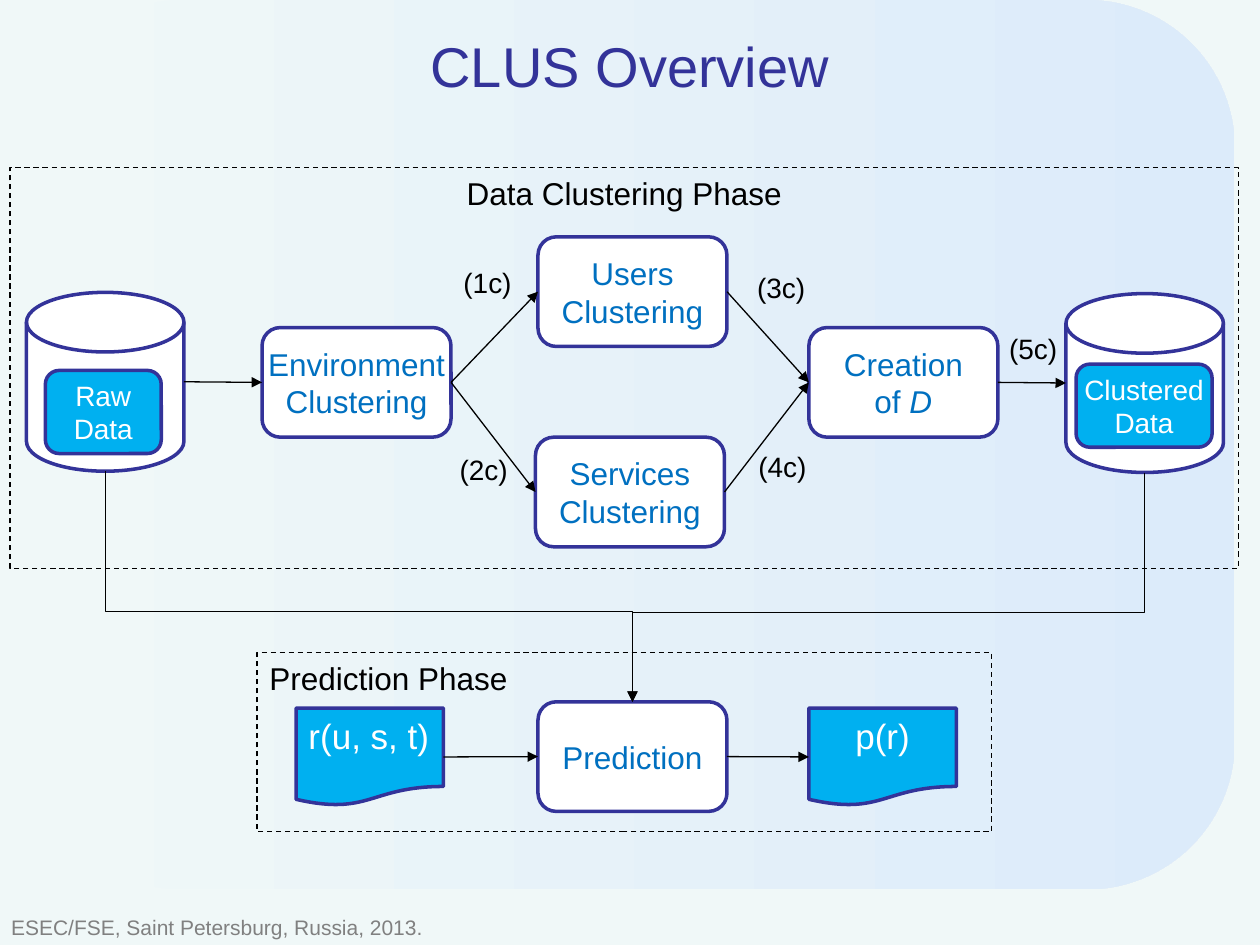
from collections import namedtuple
from pptx import Presentation
from pptx.dml.color import RGBColor
from pptx.enum.dml import MSO_LINE as Dash
from pptx.enum.shapes import MSO_CONNECTOR as Link, MSO_SHAPE as Form
from pptx.enum.text import MSO_ANCHOR as Anchor, PP_ALIGN as Align
from pptx.oxml.ns import qn
from pptx.util import Inches, Pt
from lxml import etree

PALE = RGBColor(0xF0, 0xF8, 0xF8)
SKY = RGBColor(0xDC, 0xEB, 0xFA)
NAVY = RGBColor(0x33, 0x33, 0x99)
CYAN = RGBColor(0x00, 0xB0, 0xF0)
BLUE = RGBColor(0x00, 0x70, 0xC0)
GRAY = RGBColor(0x80, 0x80, 0x80)
BLACK = RGBColor(0, 0, 0)
WHITE = RGBColor(0xFF, 0xFF, 0xFF)

# The slide is a grid of 100 columns by 75 rows of square cells
WIDE, HIGH = Inches(10), Inches(7.5)
CELL = WIDE / 100
STEP = (15, 8.7)
DRUM = (12.5, 14.2)
PAGE = (11.7, 7.75)
TAG = (5.9, 3.7)


class Box(namedtuple("Box", "x y w h")):
    """An area in grid cells."""

    def at(self, x, y, size):
        return Box(self.x + x, self.y + y, *size)

    def emu(self):
        return [round(n * CELL) for n in self]

    def west(self):
        return self.x, self.y + self.h / 2

    def east(self):
        return self.x + self.w, self.y + self.h / 2

    def north(self):
        return self.x + self.w / 2, self.y

    def south(self):
        return self.x + self.w / 2, self.y + self.h


def write(shape, text, size=18, color=BLACK, align=Align.LEFT,
          anchor=Anchor.TOP, inset=(0.1, 0.05), wrap=True):
    """Fill a shape with lines of text; stars enclose italic words."""
    frame = shape.text_frame
    frame.word_wrap = wrap
    frame.vertical_anchor = anchor
    frame.margin_left = frame.margin_right = Inches(inset[0])
    frame.margin_top = frame.margin_bottom = Inches(inset[1])
    for i, line in enumerate(text.split("\n")):
        par = frame.add_paragraph() if i else frame.paragraphs[0]
        par.alignment = align
        for j, part in enumerate(line.split("*")):
            if part:
                run = par.add_run()
                run.text = part
                font = run.font
                font.name, font.size = "Arial", Pt(size)
                font.color.rgb = color
                if j % 2:
                    font.italic = True


def label(slide, box, text, **style):
    write(slide.shapes.add_textbox(*box.emu()), text, **style)


def draw(slide, form, box, fill=None, line=NAVY, width=2):
    shape = slide.shapes.add_shape(form, *box.emu())
    shape.shadow.inherit = False
    if fill is None:
        shape.fill.background()
    else:
        shape.fill.solid()
        shape.fill.fore_color.rgb = fill
    if line is None:
        shape.line.fill.background()
    else:
        shape.line.color.rgb = line
        shape.line.width = Pt(width)
    return shape


def node(slide, box, text, fill=WHITE, color=BLUE, size=18):
    shape = draw(slide, Form.ROUNDED_RECTANGLE, box, fill)
    write(shape, text, size=size, color=color, align=Align.CENTER,
          anchor=Anchor.MIDDLE, inset=(0, 0))
    return box


def drum(slide, box, inner, text):
    draw(slide, Form.FLOWCHART_MAGNETIC_DISK, box, WHITE)
    node(slide, inner, text, CYAN, WHITE, 16)
    return box


def page(slide, box, text, align):
    shape = draw(slide, Form.FLOWCHART_DOCUMENT, box, CYAN)
    write(shape, text, size=20, color=WHITE, align=align)
    return box


def phase(slide, box, text, align):
    shape = draw(slide, Form.RECTANGLE, box, None, BLACK, 0.75)
    shape.line.dash_style = Dash.DASH
    write(shape, text, align=align)


def arrow(slide, start, end, kind=Link.STRAIGHT):
    ends = [round(n * CELL) for n in (*start, *end)]
    link = slide.shapes.add_connector(kind, *ends)
    link.line.color.rgb = BLACK
    link.line.width = Pt(0.75)
    tip = etree.SubElement(link.line._get_or_add_ln(), qn("a:tailEnd"))
    tip.set("type", "triangle")
    etree.SubElement(link._element.spPr, qn("a:effectLst"))
    return link


def elbow(slide, start, end, bend):
    """An arrow that runs down, across and down again."""
    (x1, y1), (x2, y2) = start, end
    run, drop = abs(x2 - x1), y2 - y1
    left, top = (x1 + x2 - drop) / 2, (y1 + y2 - run) / 2
    link = arrow(slide, (left, top), (left + drop, top + run), Link.ELBOW)
    # A quarter turn makes the first leg vertical
    turn = link._element.spPr.find(qn("a:xfrm"))
    turn.set("rot", str((90 if x2 < x1 else 270) * 60000))
    if x2 > x1:
        turn.set("flipH", "1")
    geom = link._element.spPr.find(qn("a:prstGeom"))
    guide = etree.SubElement(geom.find(qn("a:avLst")), qn("a:gd"))
    guide.set("name", "adj1")
    guide.set("fmla", f"val {round(bend * 100000)}")


def backdrop(slide, box):
    slide.background.fill.solid()
    slide.background.fill.fore_color.rgb = PALE
    panel = draw(slide, Form.ROUNDED_RECTANGLE,
                 box.at(2.7, 0, (95.3, 70.6)), line=None)
    panel.fill.gradient()
    panel.fill.gradient_angle = 0
    for stop, place, color in zip(panel.fill.gradient_stops, (0, 1), (PALE, SKY)):
        stop.position, stop.color.rgb = place, color
    label(slide, box.at(7.8, 0, (84.4, 10.3)), "CLUS Overview", size=32,
          color=NAVY, align=Align.CENTER, anchor=Anchor.MIDDLE)
    label(slide, box.at(-0.1, 72.1, (40.1, 2.9)),
          "ESEC/FSE, Saint Petersburg, Russia, 2013.", size=12, color=GRAY)


def cluster(slide, box):
    phase(slide, box, "Data Clustering Phase", Align.CENTER)
    raw = drum(slide, box.at(1.3, 9.9, DRUM),
               box.at(2.8, 16.1, (9.2, 6.6)), "Raw\nData")
    done = drum(slide, box.at(83.8, 10, DRUM),
                box.at(84.6, 15.6, (10.8, 6.6)), "Clustered\nData")
    env = node(slide, box.at(20, 12.7, STEP), "Environment Clustering")
    users = node(slide, box.at(41.9, 5.5, STEP), "Users\nClustering")
    serv = node(slide, box.at(41.7, 21.4, STEP), "Services\nClustering")
    make = node(slide, box.at(63.4, 12.7, STEP), "Creation\nof *D*")
    for start, end in ((raw, env), (env, users), (env, serv),
                       (users, make), (serv, make), (make, done)):
        arrow(slide, start.east(), end.west())
    spots = ((35, 7.3), (34.7, 22.1), (58.3, 7.7), (58.4, 21.9), (78.3, 12.5))
    for i, (x, y) in enumerate(spots, 1):
        label(slide, box.at(x, y, TAG), f"({i}c)", size=16, wrap=False)
    return raw, done


def predict(slide, box):
    phase(slide, box, "Prediction Phase", Align.LEFT)
    ask = page(slide, box.at(3.1, 4.4, PAGE), "r(u, s, t)", Align.LEFT)
    core = node(slide, box.at(22.3, 3.9, STEP), "Prediction")
    reply = page(slide, box.at(43.8, 4.4, PAGE), "p(r)", Align.CENTER)
    arrow(slide, ask.east(), core.west())
    arrow(slide, core.east(), reply.west())
    return core


def main():
    deck = Presentation()
    deck.slide_width, deck.slide_height = WIDE, HIGH
    slide = deck.slides.add_slide(deck.slide_layouts[6])
    backdrop(slide, Box(0, 0, 100, 75))
    drums = cluster(slide, Box(0.8, 13.3, 97.5, 31.8))
    core = predict(slide, Box(20.4, 51.8, 58.3, 14.2))
    # Both stores feed the prediction
    for store in drums:
        elbow(slide, store.south(), core.north(), 0.61)
    deck.save("out.pptx")


if __name__ == "__main__":
    main()
